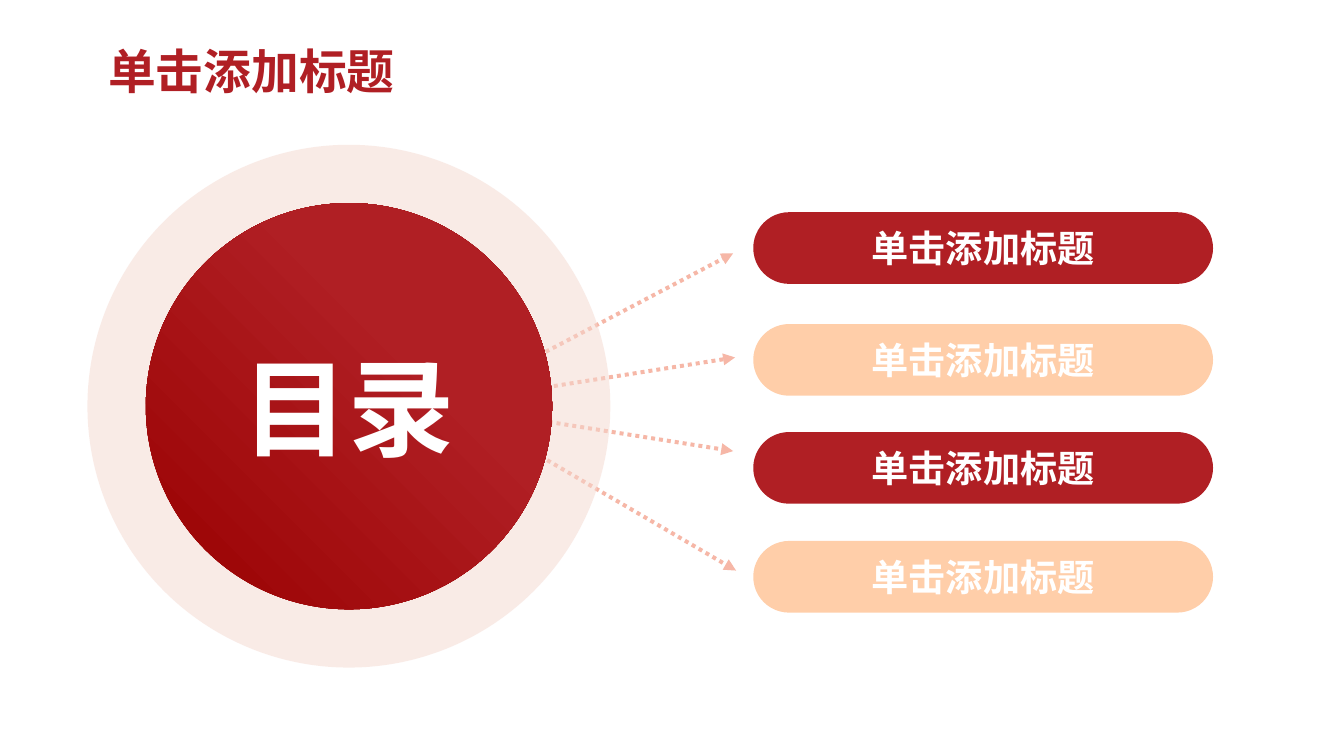
from lxml import etree
from pptx import Presentation
from pptx.dml.color import RGBColor
from pptx.enum.dml import MSO_LINE
from pptx.enum.shapes import MSO_CONNECTOR, MSO_SHAPE
from pptx.enum.text import MSO_ANCHOR, PP_ALIGN
from pptx.oxml.ns import qn
from pptx.util import Inches, Pt

ROUNDED, OVAL = MSO_SHAPE.ROUNDED_RECTANGLE, MSO_SHAPE.OVAL
STRAIGHT, DOTTED = MSO_CONNECTOR.STRAIGHT, MSO_LINE.ROUND_DOT
LEFT, CENTER, MIDDLE = PP_ALIGN.LEFT, PP_ALIGN.CENTER, MSO_ANCHOR.MIDDLE

FONT = "Noto Sans CJK SC"
RED, DARK_RED, PEACH, PINK, ROSE, WHITE = (
    "B01F24", "990000", "FFCEA9", "F5D8CF", "F6B7A7", "FFFFFF")

TITLE = "单击添加标题"
HUB_TEXT = "目录"
HUB_CENTER = (3.65, 4.25)
HALO_SIZE, HUB_SIZE = 5.47, 4.25
PILL_LEFT, PILL_WIDTH, PILL_HEIGHT = 7.88, 4.81, 0.75
PILLS = [  # text, top, colour
    ("单击添加标题", 2.22, RED),
    ("单击添加标题", 3.39, PEACH),
    ("单击添加标题", 4.52, RED),
    ("单击添加标题", 5.66, PEACH),
]
ARROWS = [  # start x, start y, end x, end y
    (4.97, 4.07, 7.67, 2.65),
    (4.97, 4.17, 7.69, 3.74),
    (5.08, 4.31, 7.67, 4.72),
    (5.22, 4.52, 7.70, 5.97),
]


def rgb(color):
    return RGBColor.from_string(color)


def write(shape, text, size, color, alignment=CENTER):
    frame = shape.text_frame
    frame.word_wrap = True
    frame.vertical_anchor = MIDDLE
    frame.margin_left = frame.margin_right = 0
    frame.margin_top = frame.margin_bottom = 0
    frame.text = text
    paragraph = frame.paragraphs[0]
    paragraph.alignment = alignment
    font = paragraph.font
    font.name, font.size, font.bold = FONT, Pt(size), True
    font.color.rgb = rgb(color)
    # East Asian characters take their typeface from a separate element
    properties = paragraph._p.pPr.find(qn("a:defRPr"))
    etree.SubElement(properties, qn("a:ea"), typeface=FONT)


def add_shape(slide, kind, left, top, width, height, color):
    shape = slide.shapes.add_shape(
        kind, Inches(left), Inches(top), Inches(width), Inches(height))
    shape.shadow.inherit = False
    shape.line.fill.background()
    shape.fill.solid()
    shape.fill.fore_color.rgb = rgb(color)
    return shape


def add_circle(slide, size, color):
    x, y = HUB_CENTER
    return add_shape(slide, OVAL, x - size / 2, y - size / 2, size, size, color)


def add_arrow(slide, *ends):
    arrow = slide.shapes.add_connector(STRAIGHT, *map(Inches, ends))
    arrow.line.color.rgb = rgb(ROSE)
    arrow.line.width = Pt(3)
    arrow.line.dash_style = DOTTED
    etree.SubElement(arrow.line._get_or_add_ln(), qn("a:tailEnd"), type="triangle")
    etree.SubElement(arrow._element.spPr, qn("a:effectLst"))


def set_transparent(shape, opacity):
    color = shape._element.spPr.find(".//" + qn("a:srgbClr"))
    etree.SubElement(color, qn("a:alpha"), val=str(opacity * 1000))


def set_radial_gradient(shape, stops):
    """Fill with a circular gradient that spreads from the top right corner."""
    shape.fill.gradient()
    for stop, (position, color) in zip(shape.fill.gradient_stops, stops):
        stop.position = position
        stop.color.rgb = rgb(color)
    gradient = shape._element.spPr.find(qn("a:gradFill"))
    linear = gradient.find(qn("a:lin"))
    circle = etree.Element(qn("a:path"), {"path": "circle"})
    etree.SubElement(circle, qn("a:fillToRect"), l="100000", b="100000")
    gradient.replace(linear, circle)


def main():
    presentation = Presentation()
    presentation.slide_width = Inches(14.06)
    presentation.slide_height = Inches(7.91)
    slide = presentation.slides.add_slide(presentation.slide_layouts[5])

    title = slide.shapes.title
    title.left, title.top = Inches(1.13), Inches(0.43)
    title.width, title.height = Inches(3.46), Inches(0.61)
    write(title, TITLE, 36, RED, LEFT)

    for text, top, color in PILLS:
        pill = add_shape(slide, ROUNDED, PILL_LEFT, top, PILL_WIDTH, PILL_HEIGHT, color)
        pill.adjustments[0] = 0.5
        write(pill, text, 28, WHITE)

    for ends in ARROWS:
        add_arrow(slide, *ends)

    halo = add_circle(slide, HALO_SIZE, PINK)
    set_transparent(halo, 50)
    hub = add_circle(slide, HUB_SIZE, RED)
    set_radial_gradient(hub, [(0.35, RED), (1, DARK_RED)])
    write(hub, HUB_TEXT, 80, WHITE)

    presentation.save("out.pptx")


if __name__ == "__main__":
    main()
